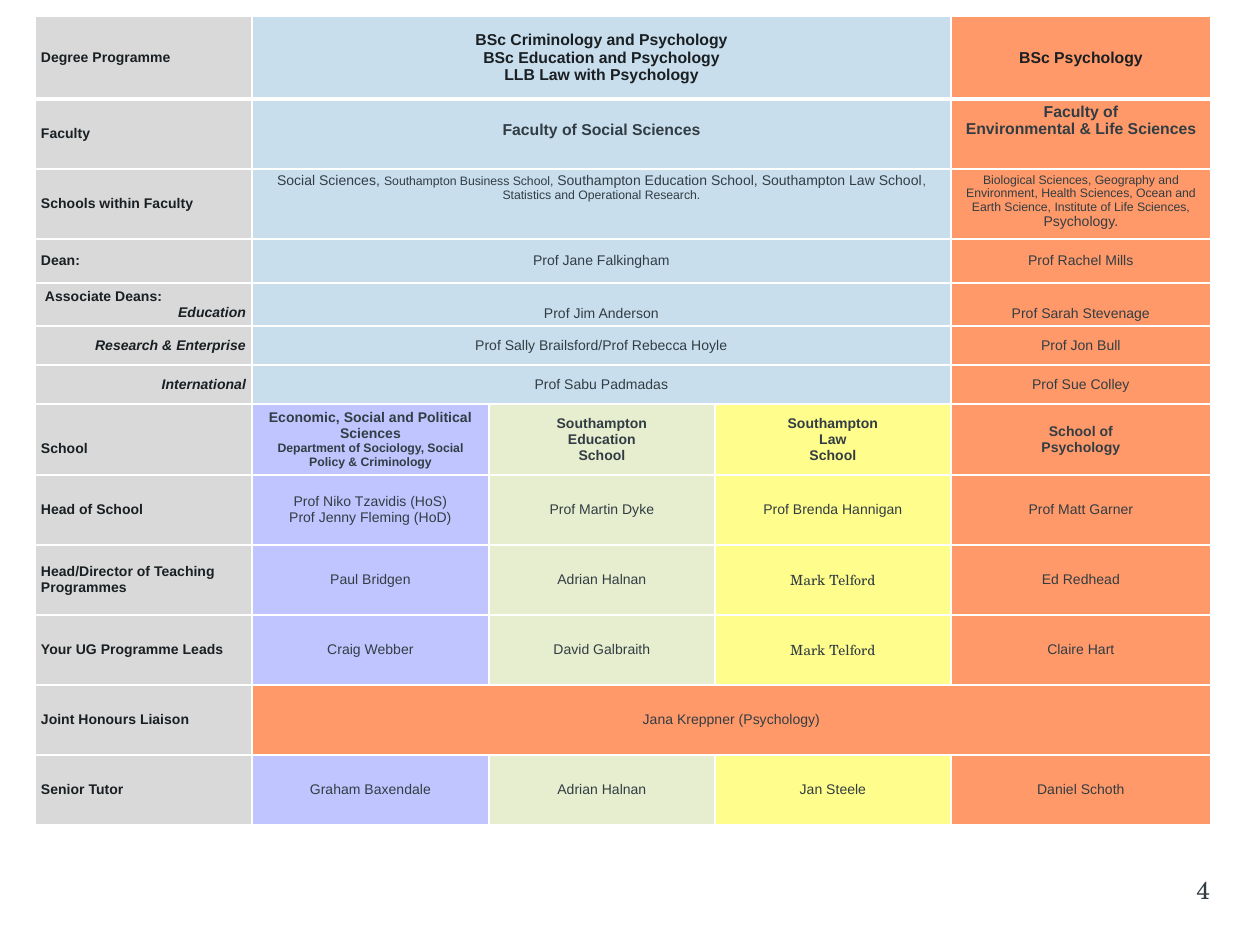
from lxml import etree
from pptx import Presentation
from pptx.dml.color import RGBColor
from pptx.enum.text import MSO_ANCHOR, PP_ALIGN
from pptx.oxml.ns import qn
from pptx.util import Emu, Pt

LEFT, MID, RIGHT = PP_ALIGN.LEFT, PP_ALIGN.CENTER, PP_ALIGN.RIGHT
TOP, CENTER, BOTTOM = MSO_ANCHOR.TOP, MSO_ANCHOR.MIDDLE, MSO_ANCHOR.BOTTOM
SCALE = 914400 / 126
HUES = {"grey": "D9D9D9", "blue": "C9DEED", "lilac": "7A81FF", "green": "C8D68D",
        "yellow": "FFFD78", "orange": "FF9969", "dark": "191F22", "text": "323D43",
        "white": "FFFFFF"}
ALPHA = {"lilac": 46, "green": 42, "yellow": 86}
SERIF = {"name": "TeX Gyre Schola"}
SMALL = {"size": Pt(7)}

# Cell layouts by number of cells in a row: first column, span, fill
SPANS = {
    2: [(0, 1, "grey"), (1, 4, "orange")],
    3: [(0, 1, "grey"), (1, 3, "blue"), (4, 1, "orange")],
    5: [(0, 1, "grey"), (1, 1, "lilac"), (2, 1, "green"), (3, 1, "yellow"),
        (4, 1, "orange")],
}
LABEL = {"size": Pt(8), "bold": True, "hue": "dark"}
BODY = {"size": Pt(8), "bold": False, "hue": "text"}
HEAD = {"size": Pt(9), "bold": True, "hue": "dark"}
UNIT = {"size": Pt(9), "bold": True, "hue": "text"}
SCHOOL = {"size": Pt(8), "bold": True, "hue": "text"}
ROLES = ("Education", "Research & Enterprise", "International")

COLS = [217, 237, 226, 236, 260]
# Height, style of the body cells, cells; a cell is text or a list of paragraphs of runs
ROWS = [
    (83, HEAD, ["Degree Programme",
                "BSc Criminology and Psychology\nBSc Education and Psychology\n"
                "LLB Law with Psychology",
                "BSc Psychology"]),
    (70, UNIT, ["Faculty", "Faculty of Social Sciences",
                "Faculty of\nEnvironmental & Life Sciences"]),
    (70, BODY, ["Schools within Faculty",
                [[("Social Sciences, ", {}),
                  ("Southampton Business School,", SMALL),
                  (" Southampton Education School, Southampton Law School", {}),
                  (", Statistics and Operational Research.", SMALL)]],
                [[("Biological Sciences, Geography and Environment, Health Sciences, "
                   "Ocean and Earth Science, Institute of Life Sciences, ", SMALL),
                  ("Psychology.", {})]]]),
    (44, BODY, ["Dean:", "Prof Jane Falkingham", "Prof Rachel Mills"]),
    (43, BODY, ["Associate Deans:\nEducation", "Prof Jim Anderson",
                "Prof Sarah Stevenage"]),
    (39, BODY, ["Research & Enterprise", "Prof Sally Brailsford/Prof Rebecca Hoyle",
                "Prof Jon Bull"]),
    (39, BODY, ["International", "Prof Sabu Padmadas", "Prof Sue Colley"]),
    (70, SCHOOL, ["School",
                  [[("Economic, Social and Political Sciences", {})],
                   [("Department of Sociology, Social Policy & Criminology", SMALL)]],
                  "Southampton\nEducation\nSchool", "Southampton\nLaw\nSchool",
                  "School of\nPsychology"]),
    (70, BODY, ["Head of School", "Prof Niko Tzavidis (HoS)\nProf Jenny Fleming (HoD)",
                "Prof Martin Dyke", "Prof Brenda Hannigan", "Prof Matt Garner"]),
    (70, BODY, ["Head/Director of Teaching Programmes", "Paul Bridgen", "Adrian Halnan",
                [[("Mark Telford", SERIF)]], "Ed Redhead"]),
    (70, BODY, ["Your UG Programme Leads", "Craig Webber", "David Galbraith",
                [[("Mark Telford", SERIF)]], "Claire Hart"]),
    (70, BODY, ["Joint Honours Liaison", "Jana Kreppner (Psychology)"]),
    (70, BODY, ["Senior Tutor", "Graham Baxendale", "Adrian Halnan", "Jan Steele",
                "Daniel Schoth"]),
]
# Cells that depart from the usual anchor and margins, by row and column
SHIFTS = {
    (1, 1): {"vertical_anchor": TOP, "margin_top": 22},
    (1, 4): {"vertical_anchor": TOP},
    (2, 1): {"vertical_anchor": TOP},
    (2, 4): {"vertical_anchor": TOP},
    (4, 0): {"margin_left": 10},
    (4, 1): {"vertical_anchor": BOTTOM},
    (4, 4): {"vertical_anchor": BOTTOM},
    (7, 0): {"margin_top": 22},
}


def px(size):
    return Emu(round(size * SCALE))


class Deck:
    def __init__(self, wide, high, font):
        self.show = Presentation()
        self.show.slide_width, self.show.slide_height = px(wide), px(high)
        self.slide = self.show.slides.add_slide(self.show.slide_layouts[6])
        self.font = font

    def put(self, frame, paras, style, align):
        """Fill a frame with text, or with paragraphs of (text, format) runs."""
        if isinstance(paras, str):
            paras = [[(line, {})] for line in paras.split("\n")]
        for num, runs in enumerate(paras):
            para = frame.add_paragraph() if num else frame.paragraphs[0]
            role = align == LEFT and runs[0][0] in ROLES
            para.alignment = RIGHT if role else align
            for text, extra in runs:
                run = para.add_run()
                run.text = text
                look = {"name": self.font, "italic": role, **style, **extra}
                run.font.color.rgb = RGBColor.from_string(HUES[look.pop("hue")])
                for key, value in look.items():
                    setattr(run.font, key, value)

    def text(self, box, words, style, align):
        frame = self.slide.shapes.add_textbox(*map(px, box)).text_frame
        frame.word_wrap = True
        frame.margin_right = 0
        self.put(frame, words, style, align)

    def edge(self, cell, row):
        """Draw white cell borders, thick below the header row."""
        props = cell._tc.get_or_add_tcPr()
        for num, side in enumerate("LRTB"):
            thick = (row, side) in ((0, "B"), (1, "T"))
            line = etree.Element(qn(f"a:ln{side}"), w=str(int(Pt(3 if thick else 1))))
            fill = etree.SubElement(line, qn("a:solidFill"))
            etree.SubElement(fill, qn("a:srgbClr"), val=HUES["white"])
            props.insert(num, line)

    def tint(self, cell, hue):
        cell.fill.solid()
        cell.fill.fore_color.rgb = RGBColor.from_string(HUES[hue])
        if hue in ALPHA:
            color = cell._tc.tcPr.find(".//" + qn("a:srgbClr"))
            etree.SubElement(color, qn("a:alpha"), val=str(ALPHA[hue] * 1000))

    def table(self, left, top, cols, rows):
        high = sum(row[0] for row in rows)
        grid = self.slide.shapes.add_table(
            len(rows), len(cols), px(left), px(top), px(sum(cols)), px(high)).table
        grid.horz_banding = False
        for col, wide in zip(grid.columns, cols):
            col.width = px(wide)
        for row, (tall, style, cells) in enumerate(rows):
            grid.rows[row].height = px(tall)
            for (col, span, hue), words in zip(SPANS[len(cells)], cells):
                cell = grid.cell(row, col)
                if span > 1:
                    cell.merge(grid.cell(row, col + span - 1))
                for part in range(col, col + span):
                    self.tint(grid.cell(row, part), hue)
                    self.edge(grid.cell(row, part), row)
                place = {"vertical_anchor": CENTER, "margin_left": 6, "margin_right": 6,
                         "margin_top": 4, "margin_bottom": 4,
                         **SHIFTS.get((row, col), {})}
                for key, value in place.items():
                    setattr(cell, key, px(value) if key.startswith("margin") else value)
                self.put(cell.text_frame, words, style if col else LABEL,
                         MID if col else LEFT)


def main():
    deck = Deck(1260, 945, "Arial")
    deck.text((948, 869, 262, 63), "4", {**SERIF, "size": Pt(14), "hue": "text"}, RIGHT)
    deck.table(35, 16, COLS, ROWS)
    deck.show.save("out.pptx")


if __name__ == "__main__":
    main()
